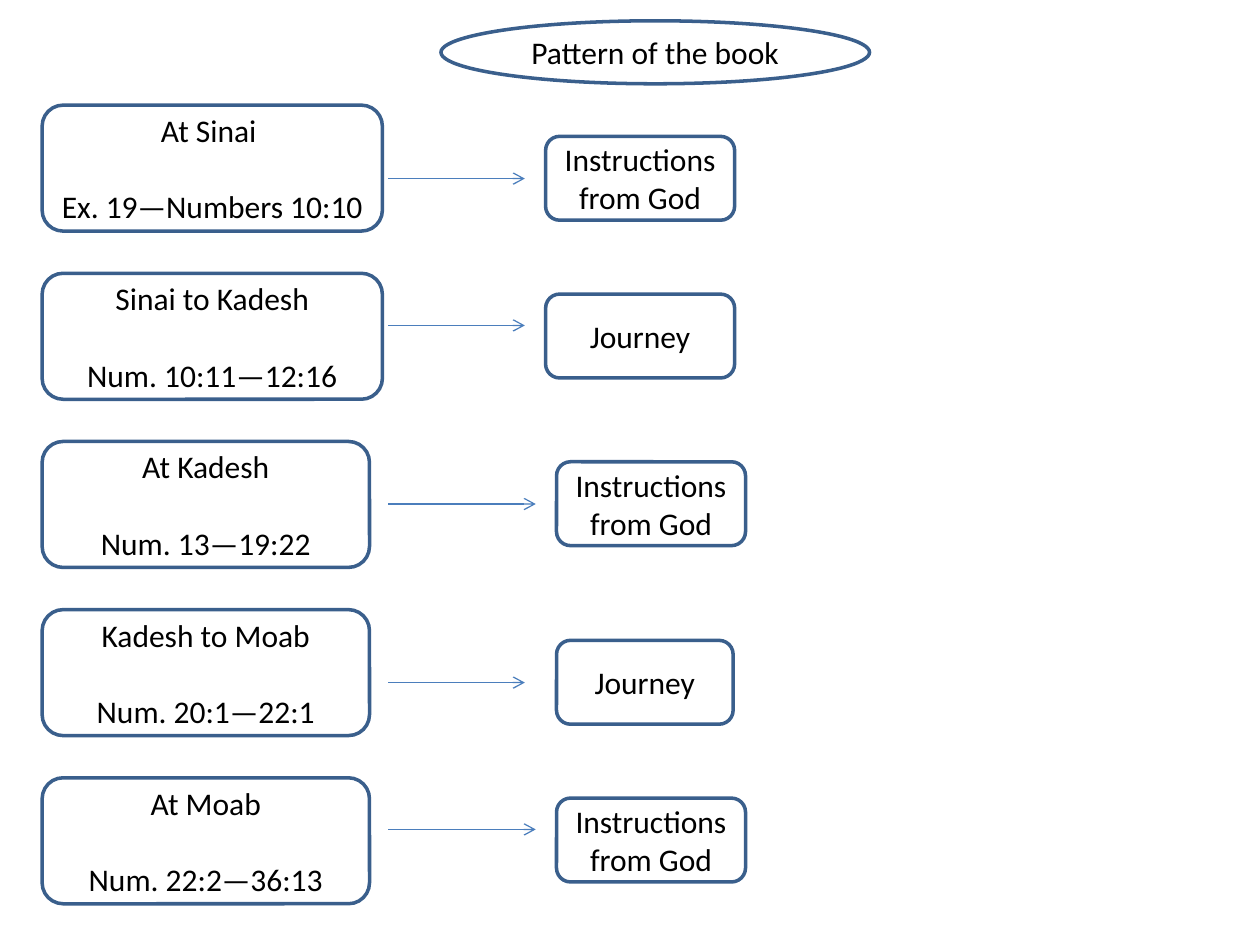
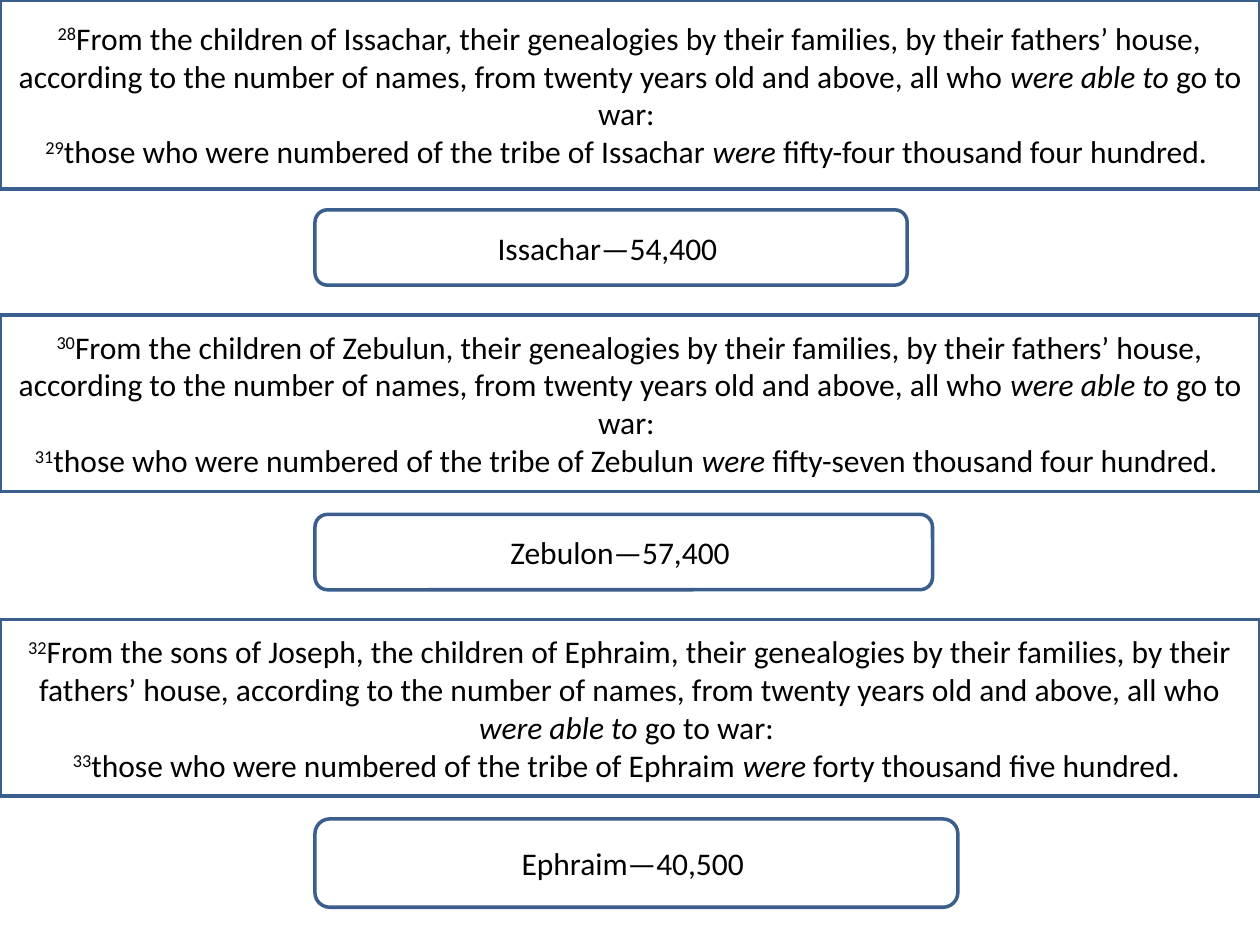
from lxml.etree import SubElement
from pptx import Presentation
from pptx.dml.color import RGBColor
from pptx.enum.shapes import MSO_CONNECTOR, MSO_SHAPE
from pptx.enum.text import MSO_ANCHOR, PP_ALIGN
from pptx.oxml.ns import qn
from pptx.util import Cm, Pt

WHITE = RGBColor(0xFF, 0xFF, 0xFF)
BLACK = RGBColor(0x00, 0x00, 0x00)
OUTLINE_BLUE = RGBColor(0x3A, 0x5F, 0x8C)
ARROW_BLUE = RGBColor(0x4B, 0x7E, 0xBC)
FONT_NAME = "Calibri"
FONT_SIZE = Pt(18)
BLANK_LAYOUT = 6


def add_box(slide, geometry, left, top, width, height):
    """Add a white box with a blue outline; return its first paragraph."""
    shape = slide.shapes.add_shape(geometry, Cm(left), Cm(top), Cm(width), Cm(height))
    shape.shadow.inherit = False
    shape.fill.solid()
    shape.fill.fore_color.rgb = WHITE
    shape.line.color.rgb = OUTLINE_BLUE
    shape.line.width = Pt(2)
    text_frame = shape.text_frame
    text_frame.word_wrap = True
    text_frame.vertical_anchor = MSO_ANCHOR.MIDDLE
    text_frame.paragraphs[0].alignment = PP_ALIGN.CENTER
    return text_frame.paragraphs[0]


def add_run(paragraph, text, italic=False, superscript=False):
    run = paragraph.add_run()
    run.text = text
    run.font.name = FONT_NAME
    run.font.size = FONT_SIZE
    run.font.color.rgb = BLACK
    run.font.italic = italic
    if superscript:
        run._r.get_or_add_rPr().set("baseline", "30000")


presentation = Presentation()
presentation.slide_width = Cm(25.4)
presentation.slide_height = Cm(19.05)
blank_layout = presentation.slide_layouts[BLANK_LAYOUT]

# Slide 1: stages of the journey and what happens in each
slide = presentation.slides.add_slide(blank_layout)
heading = add_box(slide, MSO_SHAPE.OVAL, 8.89, 0.42, 8.64, 1.27)
add_run(heading, "Pattern of the book")

INSTRUCTIONS = "Instructions from God"
JOURNEY = "Journey"
STAGE_TOP, STAGE_STEP = 2.12, 3.39

# place, passage, stage width, event, event left, top, width, arrow end, arrow height
stages = [
    ("At Sinai ", "Ex. 19—Numbers 10:10", 6.86, INSTRUCTIONS, 11, 2.75, 3.81, 10.58, 3.6),
    ("Sinai to Kadesh", "Num. 10:11—12:16", 6.86, JOURNEY, 11, 5.93, 3.81, 10.58, 6.56),
    ("At Kadesh", "Num. 13—19:22", 6.6, INSTRUCTIONS, 11.22, 9.31, 3.81, 10.8, 10.16),
    ("Kadesh to Moab", "Num. 20:1—22:1", 6.6, JOURNEY, 11.22, 12.91, 3.56, 10.58, 13.76),
    ("At Moab", "Num. 22:2—36:13", 6.6, INSTRUCTIONS, 11.22, 16.09, 3.81, 10.8, 16.72),
]
for index, (place, passage, stage_width, event, event_left, event_top,
            event_width, arrow_end, arrow_height) in enumerate(stages):
    # Stage, with one line of space between place and passage
    place_paragraph = add_box(slide, MSO_SHAPE.ROUNDED_RECTANGLE, 0.85,
                              STAGE_TOP + index * STAGE_STEP, stage_width, 2.54)
    add_run(place_paragraph, place)
    passage_paragraph = place_paragraph._parent.add_paragraph()
    passage_paragraph.alignment = PP_ALIGN.CENTER
    passage_paragraph.space_before = Pt(22)
    add_run(passage_paragraph, passage)

    # Event
    event_paragraph = add_box(slide, MSO_SHAPE.FLOWCHART_ALTERNATE_PROCESS,
                              event_left, event_top, event_width, 1.69)
    add_run(event_paragraph, event)

    # Arrow from stage to event
    arrow = slide.shapes.add_connector(MSO_CONNECTOR.STRAIGHT, Cm(7.83), Cm(arrow_height),
                                       Cm(arrow_end), Cm(arrow_height))
    arrow.line.color.rgb = ARROW_BLUE
    arrow.line.width = Pt(0.75)
    properties = arrow.element.spPr
    SubElement(properties.find(qn("a:ln")), qn("a:tailEnd"), type="arrow")
    SubElement(properties, qn("a:effectLst"))

# Slide 2: census verses, each followed by the count of the tribe
slide = presentation.slides.add_slide(blank_layout)
COUNT_TOP, COUNT_STEP = 4.23, 6.14
COUNT_WIDTH, COUNT_GROWTH = 11.94, 0.51

# first verse number, people, tribe, number in words, count, verse top and height, count height
tribes = [
    (28, "children of Issachar", "Issachar", "fifty-four thousand four hundred",
     "Issachar—54,400 ", 0, 3.81, 1.52),
    (30, "children of Zebulun", "Zebulun", "fifty-seven thousand four hundred",
     "Zebulon—57,400 ", 6.35, 3.56, 1.52),
    (32, "sons of Joseph, the children of Ephraim", "Ephraim", "forty thousand five hundred",
     "Ephraim—40,500 ", 12.49, 3.56, 1.78),
]
for index, (verse, people, tribe, number, count,
            verse_top, verse_height, count_height) in enumerate(tribes):
    # Verses
    paragraph = add_box(slide, MSO_SHAPE.RECTANGLE, 0, verse_top, 25.4, verse_height)
    add_run(paragraph, str(verse), superscript=True)
    add_run(paragraph, f"From the {people}, their genealogies by their families, "
                       "by their fathers’ house, according to the number of names, "
                       "from twenty years old and above, all who ")
    add_run(paragraph, "were able to", italic=True)
    add_run(paragraph, " go to war: ")
    paragraph.add_line_break()
    add_run(paragraph, str(verse + 1), superscript=True)
    add_run(paragraph, f"those who were numbered of the tribe of {tribe} ")
    add_run(paragraph, "were", italic=True)
    add_run(paragraph, f" {number}. ")

    # Count
    count_paragraph = add_box(slide, MSO_SHAPE.ROUNDED_RECTANGLE, 6.35,
                              COUNT_TOP + index * COUNT_STEP,
                              COUNT_WIDTH + index * COUNT_GROWTH, count_height)
    add_run(count_paragraph, count)

presentation.save("out.pptx")
